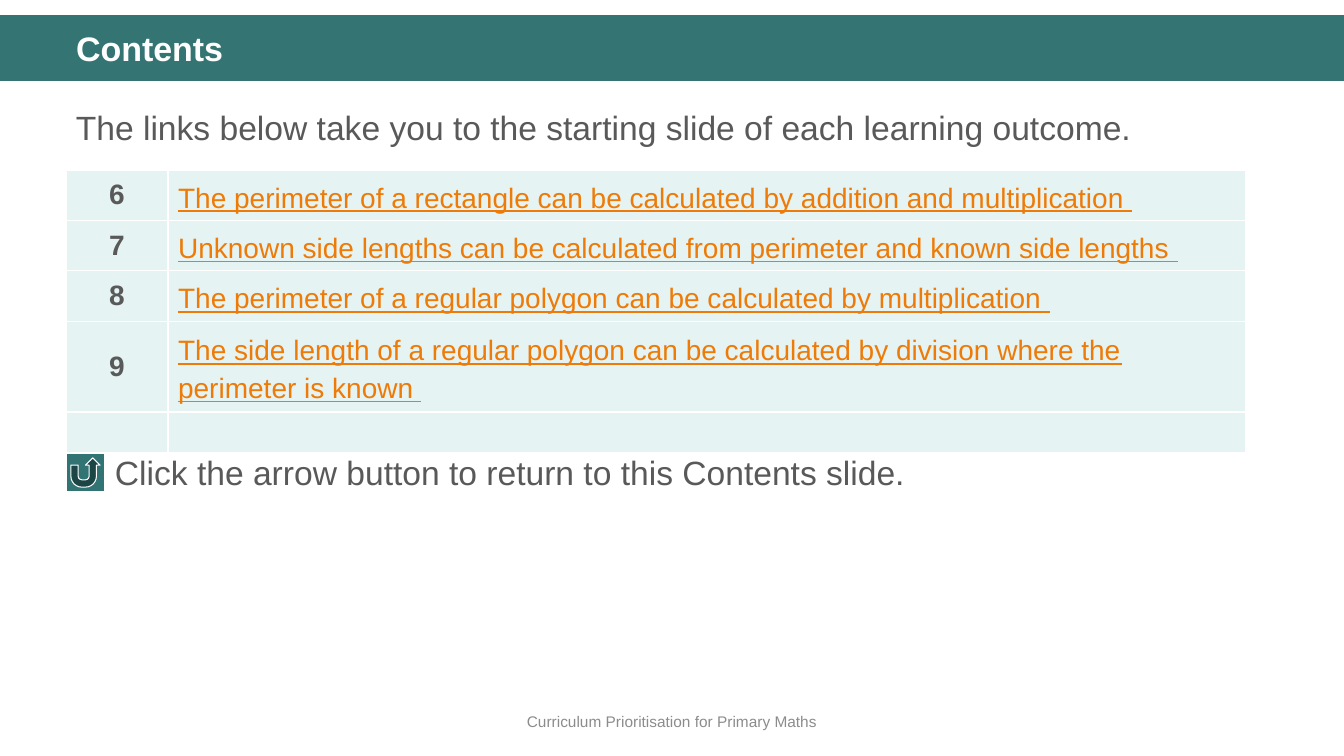
from dataclasses import dataclass

from pptx import Presentation
from pptx.dml.color import RGBColor
from pptx.enum.shapes import MSO_SHAPE
from pptx.enum.text import MSO_ANCHOR as ANCHOR, PP_ALIGN as ALIGN
from pptx.oxml.xmlchemy import OxmlElement
from pptx.util import Emu, Pt

WHITE = RGBColor(0xFF, 0xFF, 0xFF)
BAND_TEAL = RGBColor(0x34, 0x75, 0x74)
BUTTON_TEAL = RGBColor(0x32, 0x74, 0x73)
PALE_TEAL = RGBColor(0xE5, 0xF3, 0xF2)
BODY_GREY = RGBColor(0x59, 0x59, 0x59)
FOOTER_GREY = RGBColor(0x8C, 0x8C, 0x8C)
LINK_ORANGE = RGBColor(0xEE, 0x7B, 0x08)
FONT = "Arial"
EMU_PER_INCH = 914400
PX_PER_INCH = 100.8


def px(length: int) -> Emu:
    return Emu(round(length * EMU_PER_INCH / PX_PER_INCH))


@dataclass(frozen=True)
class Box:
    left: int
    top: int
    width: int
    height: int

    def emu(self) -> tuple[Emu, Emu, Emu, Emu]:
        return px(self.left), px(self.top), px(self.width), px(self.height)


@dataclass(frozen=True)
class TextStyle:
    size: float
    color: RGBColor
    bold: bool = False
    underline: bool = False
    align: ALIGN = ALIGN.LEFT
    spacing: float = 1.0


@dataclass(frozen=True)
class TextBlock:
    text: str
    box: Box
    style: TextStyle
    anchor: ANCHOR = ANCHOR.TOP


@dataclass(frozen=True)
class Outcome:
    number: str
    title: str
    height: int


TITLE = TextBlock("Contents", Box(66, 27, 1228, 47),
                  TextStyle(24.3, WHITE, bold=True, spacing=0.9))
TEXT_BLOCKS = [
    TextBlock("Curriculum Prioritisation for Primary Maths", Box(0, 701, 1344, 40),
              TextStyle(11, FOOTER_GREY, align=ALIGN.CENTER), ANCHOR.MIDDLE),
    TextBlock("The links below take you to the starting slide of each learning outcome.",
              Box(66, 94, 1228, 60), TextStyle(24, BODY_GREY, spacing=1.2)),
    TextBlock("Click the arrow button to return to this Contents slide.",
              Box(105, 447, 1141, 50), TextStyle(24, BODY_GREY)),
]
OUTCOMES = [
    Outcome("6", "The perimeter of a rectangle can be calculated by addition "
                 "and multiplication ", 47),
    Outcome("7", "Unknown side lengths can be calculated from perimeter "
                 "and known side lengths ", 48),
    Outcome("8", "The perimeter of a regular polygon can be calculated "
                 "by multiplication ", 48),
    Outcome("9", "The side length of a regular polygon can be calculated by division "
                 "where the perimeter is known ", 85),
    Outcome("", "", 41),
]
COLUMN_WIDTHS = (102, 1078)
NUMBER_STYLE = TextStyle(20, BODY_GREY, bold=True, align=ALIGN.CENTER)
LINK_STYLE = TextStyle(20, LINK_ORANGE, underline=True, spacing=1.2)


def write(frame, text: str, style: TextStyle) -> None:
    frame.text = text
    paragraph = frame.paragraphs[0]
    paragraph.alignment = style.align
    paragraph.line_spacing = style.spacing
    for run in paragraph.runs:
        run.font.name = FONT
        run.font.size = Pt(style.size)
        run.font.bold = style.bold
        run.font.underline = style.underline
        run.font.color.rgb = style.color


def fill_block(shape, block: TextBlock) -> None:
    shape.left, shape.top, shape.width, shape.height = block.box.emu()
    shape.text_frame.word_wrap = True
    shape.text_frame.vertical_anchor = block.anchor
    write(shape.text_frame, block.text, block.style)


def add_filled(slide, kind: MSO_SHAPE, box: Box, color: RGBColor):
    shape = slide.shapes.add_shape(kind, *box.emu())
    shape.shadow.inherit = False
    shape.fill.solid()
    shape.fill.fore_color.rgb = color
    shape.line.fill.background()
    return shape


def add_borders(cell) -> None:
    properties = cell._tc.get_or_add_tcPr()
    for side in ("a:lnL", "a:lnR", "a:lnT", "a:lnB"):
        line = OxmlElement(side)
        line.set("w", str(Pt(1)))
        solid = OxmlElement("a:solidFill")
        color = OxmlElement("a:srgbClr")
        color.set("val", str(WHITE))
        solid.append(color)
        line.append(solid)
        properties.append(line)


def add_outcomes(slide) -> None:
    box = Box(66, 170, sum(COLUMN_WIDTHS), sum(o.height for o in OUTCOMES))
    table = slide.shapes.add_table(len(OUTCOMES), len(COLUMN_WIDTHS), *box.emu()).table
    table.first_row = False
    table.horz_banding = False
    for column, width in zip(table.columns, COLUMN_WIDTHS):
        column.width = px(width)
    for row, outcome in zip(table.rows, OUTCOMES):
        row.height = px(outcome.height)
        entries = ((outcome.number, NUMBER_STYLE), (outcome.title, LINK_STYLE))
        for cell, (text, style) in zip(row.cells, entries):
            add_borders(cell)
            cell.fill.solid()
            cell.fill.fore_color.rgb = PALE_TEAL
            cell.vertical_anchor = ANCHOR.MIDDLE
            if text:
                write(cell.text_frame, text, style)


def main() -> None:
    deck = Presentation()
    deck.slide_width, deck.slide_height = px(1344), px(756)
    slide = deck.slides.add_slide(deck.slide_layouts[5])

    # Title on its band
    add_filled(slide, MSO_SHAPE.RECTANGLE, Box(0, 15, 1344, 66), BAND_TEAL)
    title = slide.shapes.title
    fill_block(title, TITLE)
    slide.shapes.element.append(title.element)

    # Introduction, return hint and footer
    for block in TEXT_BLOCKS:
        fill_block(slide.shapes.add_textbox(*block.box.emu()), block)

    # Learning outcomes
    add_outcomes(slide)

    # Return button
    button = add_filled(slide, MSO_SHAPE.ACTION_BUTTON_RETURN,
                        Box(66, 453, 39, 39), BUTTON_TEAL)
    button.line.color.rgb = WHITE
    button.line.width = Pt(0.75)

    deck.save("out.pptx")


if __name__ == "__main__":
    main()
